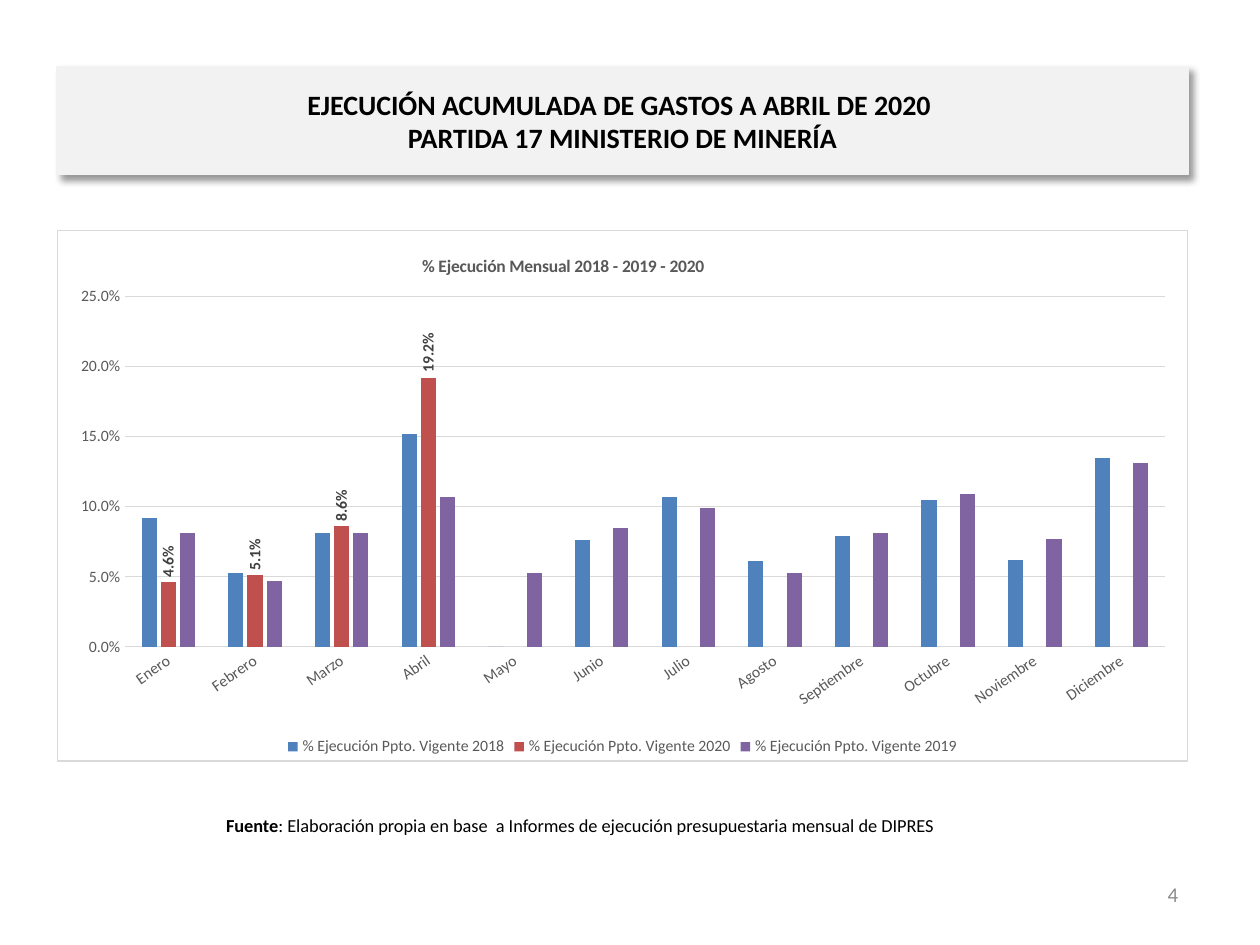
from dataclasses import dataclass

from lxml.etree import SubElement
from pptx import Presentation
from pptx.chart.data import CategoryChartData as Data
from pptx.dml.color import RGBColor
from pptx.enum.chart import XL_CHART_TYPE as Kind, XL_LABEL_POSITION as Spot
from pptx.enum.chart import XL_LEGEND_POSITION as Place, XL_TICK_MARK as Tick
from pptx.enum.shapes import MSO_SHAPE as Form
from pptx.enum.text import MSO_ANCHOR as Anchor, PP_ALIGN as Align
from pptx.oxml import parse_xml
from pptx.oxml.ns import nsdecls, qn
from pptx.util import Inches, Pt

WIDE, HIGH = Inches(10), Inches(7.5)
FONT, INK, GREY, RULE, PALE = "Calibri", "000000", "595959", "D9D9D9", "F2F2F2"
RATE = "0.0%"
MONTHS = ("Enero", "Febrero", "Marzo", "Abril", "Mayo", "Junio", "Julio", "Agosto",
          "Septiembre", "Octubre", "Noviembre", "Diciembre")


@dataclass
class Box:
    x: float
    y: float
    w: float
    h: float

    def emu(self) -> tuple:
        return (int(self.x * WIDE), int(self.y * HIGH),
                int(self.w * WIDE), int(self.h * HIGH))


@dataclass
class Series:
    year: int
    tint: str
    rates: tuple


@dataclass
class Note:
    box: Box
    runs: tuple
    size: float
    tint: str
    align: Align


SERIES = (
    Series(2018, "4F81BD", (.092, .053, .081, .152, 0, .076, .107, .061, .079, .105, .062, .135)),
    Series(2020, "C0504D", (.046, .051, .086, .192) + (None,) * 8),
    Series(2019, "8064A2", (.081, .047, .081, .107, .053, .085, .099, .053, .081, .109, .077, .131)),
)
HEAD = Note(Box(.045, .071, .898, .114),
            (("EJECUCIÓN ACUMULADA DE GASTOS A ABRIL DE 2020 \vPARTIDA 17 MINISTERIO DE MINERÍA", True),),
            16, INK, Align.CENTER)
NOTES = (
    Note(Box(.712, .92, .233, .053), (("4", False),), 12, "8C8C8C", Align.RIGHT),
    Note(Box(.059, .847, .803, .053),
         (("Fuente", True),
          (": Elaboración propia en base  a Informes de ejecución presupuestaria mensual de DIPRES", False)),
         10.5, INK, Align.CENTER),
)
GRAPH = Box(.045, .243, .898, .563)


def hue(code: str) -> RGBColor:
    return RGBColor.from_string(code)


def style(font, size: float, tint: str, bold: bool = False) -> None:
    font.name, font.size, font.bold = FONT, Pt(size), bold
    font.color.rgb = hue(tint)


def stroke(line, tint: str) -> None:
    line.color.rgb = hue(tint)
    line.width = Pt(.75)


def write(shape, note: Note) -> None:
    frame = shape.text_frame
    frame.word_wrap = True
    frame.vertical_anchor = Anchor.MIDDLE
    para = frame.paragraphs[0]
    para.alignment = note.align
    if len(note.runs) == 1:
        para.text = note.runs[0][0]
        for run in para.runs:
            style(run.font, note.size, note.tint, note.runs[0][1])
        return
    for text, bold in note.runs:
        run = para.add_run()
        run.text = text
        style(run.font, note.size, note.tint, bold)


def banner(slide, note: Note) -> None:
    shape = slide.shapes.add_shape(Form.RECTANGLE, *note.box.emu())
    shape.fill.solid()
    shape.fill.fore_color.rgb = hue(PALE)
    stroke(shape.line, PALE)
    shape.shadow.inherit = False
    glow = SubElement(shape.element.spPr.find(qn("a:effectLst")), qn("a:outerShdw"),
                      blurRad=str(Pt(4)), dist=str(Pt(3)), dir="2700000",
                      algn="tl", rotWithShape="0")
    SubElement(SubElement(glow, qn("a:srgbClr"), val=INK), qn("a:alpha"), val="40000")
    write(shape, note)


def pin(node, index: int, inner: bool, **shares: float) -> None:
    for old in node.findall(qn("c:layout")):
        node.remove(old)
    layout = parse_xml(f"<c:layout {nsdecls('c')}/>")
    node.insert(index, layout)
    manual = SubElement(layout, qn("c:manualLayout"))
    if inner:
        SubElement(manual, qn("c:layoutTarget"), val="inner")
    for side in "xy":
        SubElement(manual, qn(f"c:{side}Mode"), val="edge")
    for key, share in shares.items():
        SubElement(manual, qn(f"c:{key}"), val=str(share))


def turn(holder, angle: int) -> None:
    body = holder.find(qn("c:txPr")).find(qn("a:bodyPr"))
    body.set("rot", str(angle * 60000))
    body.set("vert", "horz")


def axes(chart) -> None:
    cat, val = chart.category_axis, chart.value_axis
    for axis in (cat, val):
        axis.major_tick_mark = axis.minor_tick_mark = Tick.NONE
        style(axis.tick_labels.font, 9, GREY)
    stroke(cat.format.line, RULE)
    turn(chart.element.find(".//" + qn("c:catAx")), -35)
    val.format.line.fill.background()
    val.minimum_scale, val.maximum_scale, val.major_unit = 0, .25, .05
    val.has_major_gridlines = True
    stroke(val.major_gridlines.format.line, RULE)
    val.tick_labels.number_format = RATE
    val.tick_labels.number_format_is_linked = False


def bars(plot) -> None:
    plot.gap_width, plot.overlap = 219, -27
    plot.vary_by_categories = False
    for bar, item in zip(plot.series, SERIES):
        bar.format.fill.solid()
        bar.format.fill.fore_color.rgb = hue(item.tint)
        bar.invert_if_negative = False
    tags = plot.series[1].data_labels
    tags.show_value = True
    tags.position = Spot.OUTSIDE_END
    tags.number_format, tags.number_format_is_linked = RATE, False
    style(tags.font, 9, "404040", True)
    turn(plot.series[1].data_labels._element, -90)


def graph(slide, box: Box) -> None:
    data = Data(number_format=RATE)
    data.categories = MONTHS
    for item in SERIES:
        data.add_series(f"% Ejecución Ppto. Vigente {item.year}", item.rates)
    chart = slide.shapes.add_chart(Kind.COLUMN_CLUSTERED, *box.emu(), data).chart
    style(chart.font, 10, INK)
    chart.has_title = True
    frame = chart.chart_title.text_frame
    frame.text = "% Ejecución Mensual 2018 - 2019 - 2020"
    style(frame.paragraphs[0].runs[0].font, 10, GREY, True)
    chart.has_legend = True
    chart.legend.position = Place.BOTTOM
    chart.legend.include_in_layout = False
    style(chart.legend.font, 9, GREY)
    axes(chart)
    bars(chart.plots[0])
    root = chart.element.find(qn("c:chart"))
    pin(root.find(qn("c:title")), 1, False, x=.32, y=.04)
    pin(root.find(qn("c:plotArea")), 0, True, x=.06, y=.125, w=.92, h=.66)
    root.addnext(parse_xml(
        f"<c:spPr {nsdecls('c', 'a')}><a:solidFill><a:srgbClr val='FFFFFF'/></a:solidFill>"
        f"<a:ln w='{Pt(.75)}'><a:solidFill><a:srgbClr val='{RULE}'/></a:solidFill></a:ln></c:spPr>"))


def main() -> None:
    deck = Presentation()
    deck.slide_width, deck.slide_height = WIDE, HIGH
    slide = deck.slides.add_slide(deck.slide_layouts[6])
    banner(slide, HEAD)
    for note in NOTES:
        write(slide.shapes.add_textbox(*note.box.emu()), note)
    graph(slide, GRAPH)
    deck.save("out.pptx")


if __name__ == "__main__":
    main()
